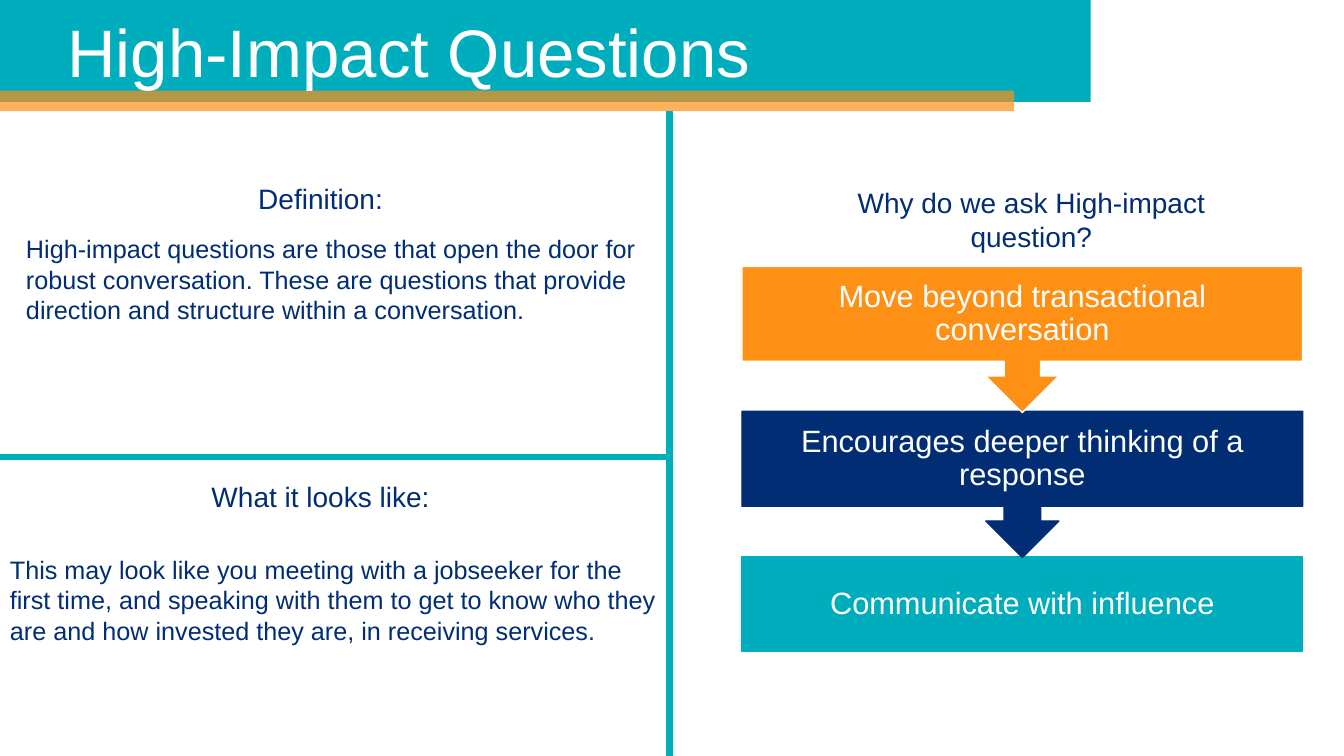
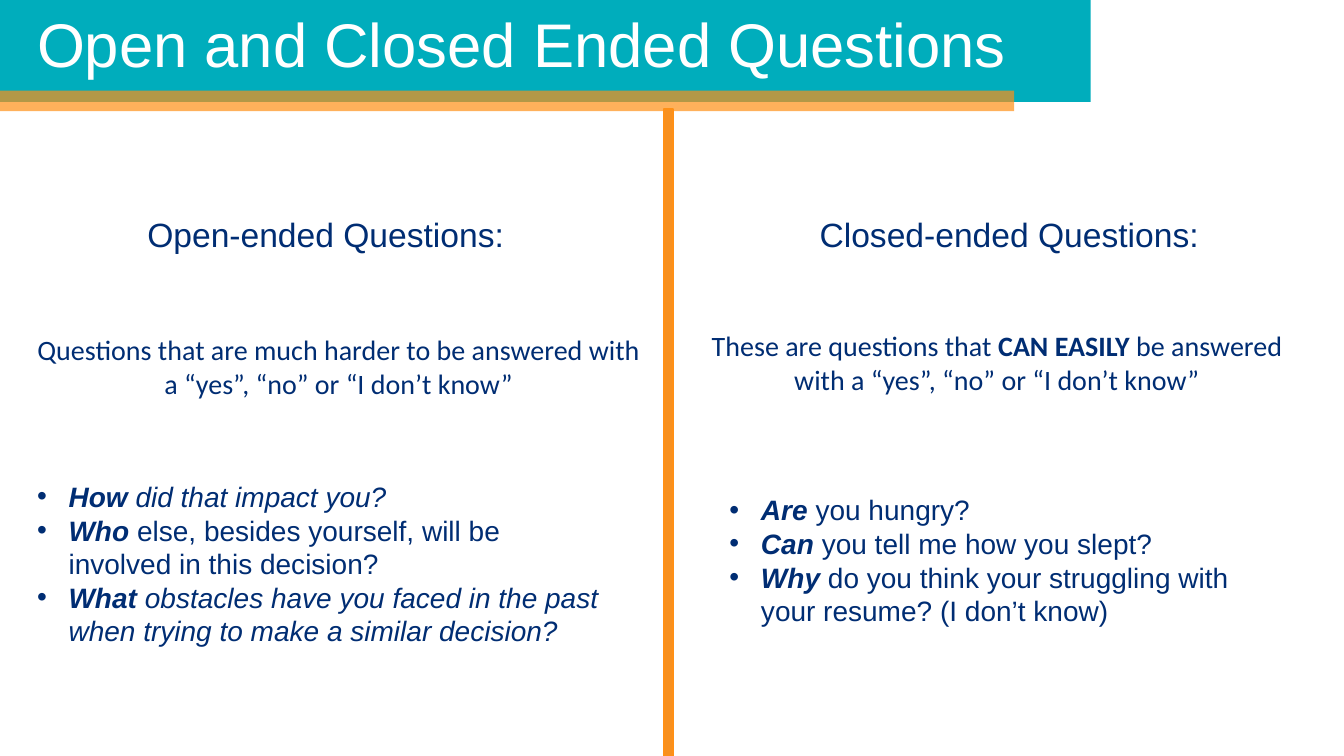
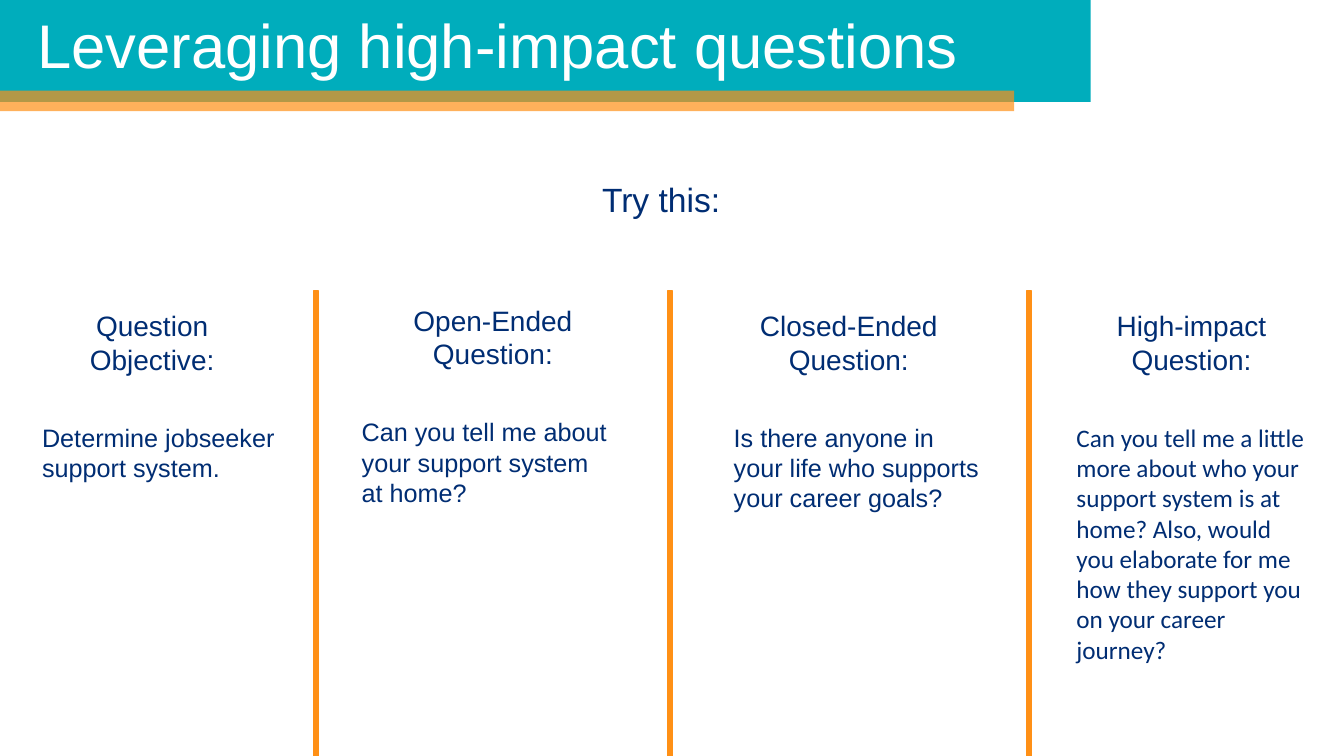
from dataclasses import dataclass
from typing import NamedTuple

from pptx import Presentation
from pptx.dml.color import RGBColor
from pptx.enum.shapes import MSO_SHAPE
from pptx.enum.text import MSO_ANCHOR, MSO_AUTO_SIZE, PP_ALIGN
from pptx.oxml.ns import qn
from pptx.util import Pt

RECTANGLE = MSO_SHAPE.RECTANGLE
CALLOUT = MSO_SHAPE.DOWN_ARROW_CALLOUT
MIDDLE = MSO_ANCHOR.MIDDLE
GROW = MSO_AUTO_SIZE.SHAPE_TO_FIT_TEXT
LEFT = PP_ALIGN.LEFT
CENTER = PP_ALIGN.CENTER

TEAL = "00ADBC"
NAVY = "002D73"
ORANGE = "FF9016"
DIVIDER_ORANGE = "F79020"
WHITE = "FFFFFF"
SANS = "Arial"
HUMANIST = "Calibri"
BULLET_INDENT = 22.5


class Span(NamedTuple):
    text: str
    bold: bool = False
    italic: bool = False


@dataclass
class Block:
    left: float
    top: float
    width: float
    height: float
    size: float
    paragraphs: list[list[Span]]
    align: PP_ALIGN = LEFT
    font: str = SANS
    color: str = NAVY
    bulleted: bool = False


@dataclass
class Bar:
    left: float
    top: float
    width: float
    height: float
    fill: str
    outline: str | None = None
    kind: MSO_SHAPE = RECTANGLE


class Reason(NamedTuple):
    text: str
    top: float
    height: float
    fill: str
    outline: str
    kind: MSO_SHAPE


class Column(NamedTuple):
    heading: str
    heading_left: float
    example: str
    example_left: float
    example_width: float
    rise: float = 0
    font: str = SANS


def rgb(color: str) -> RGBColor:
    return RGBColor.from_string(color)


def plain(text: str) -> list[list[Span]]:
    return [[Span(text)]]


def draw_bar(slide, bar: Bar):
    shape = slide.shapes.add_shape(
        bar.kind, Pt(bar.left), Pt(bar.top), Pt(bar.width), Pt(bar.height))
    shape.shadow.inherit = False
    shape.fill.solid()
    shape.fill.fore_color.rgb = rgb(bar.fill)
    if bar.outline:
        shape.line.color.rgb = rgb(bar.outline)
        shape.line.width = Pt(1)
    else:
        shape.line.fill.background()
    return shape


def style_run(run, size: float, font: str, color: str, span: Span) -> None:
    run.font.size = Pt(size)
    run.font.name = font
    run.font.color.rgb = rgb(color)
    run.font.bold = span.bold
    run.font.italic = span.italic


def add_bullet(paragraph) -> None:
    properties = paragraph._p.get_or_add_pPr()
    properties.set("marL", str(Pt(BULLET_INDENT)))
    properties.set("indent", str(-Pt(BULLET_INDENT)))
    properties.makeelement(qn("a:buFont"), {})
    for tag, key, value in (("a:buFont", "typeface", SANS), ("a:buChar", "char", "•")):
        properties.append(properties.makeelement(qn(tag), {key: value}))


def draw_block(slide, block: Block) -> None:
    frame = slide.shapes.add_textbox(
        Pt(block.left), Pt(block.top), Pt(block.width), Pt(block.height)).text_frame
    frame.word_wrap = True
    frame.auto_size = GROW
    for index, spans in enumerate(block.paragraphs):
        paragraph = frame.add_paragraph() if index else frame.paragraphs[0]
        paragraph.alignment = block.align
        if block.bulleted:
            add_bullet(paragraph)
        for span in spans:
            run = paragraph.add_run()
            run.text = span.text
            style_run(run, block.size, block.font, block.color, span)


def draw_reason(slide, reason: Reason) -> None:
    shape = draw_bar(slide, Bar(530, reason.top, 400.5, reason.height,
                                reason.fill, reason.outline, reason.kind))
    frame = shape.text_frame
    frame.word_wrap = True
    frame.vertical_anchor = MIDDLE
    frame.margin_left = frame.margin_right = Pt(12.2)
    frame.margin_top = frame.margin_bottom = Pt(12.2)
    frame.text = reason.text
    paragraph = frame.paragraphs[0]
    paragraph.alignment = CENTER
    paragraph.line_spacing = 0.9
    style_run(paragraph.runs[0], 22, SANS, WHITE, Span(reason.text))


def start_slide(deck, title: str, left: float = 19.4, top: float = 1, size: float = 44):
    slide = deck.slides.add_slide(deck.slide_layouts[6])
    draw_bar(slide, Bar(0, 0, 779, 72.7, TEAL))
    stripe = draw_bar(slide, Bar(0, 64.7, 724.4, 14.8, ORANGE))
    tint = stripe._element.spPr.find(".//" + qn("a:srgbClr"))
    tint.append(tint.makeelement(qn("a:alpha"), {"val": "70000"}))
    draw_block(slide, Block(left, top, 921.6, 60.5, size, plain(title), color=WHITE))
    return slide


def build_definition(deck) -> None:
    slide = start_slide(deck, "High-Impact Questions", 41, 3.6, 48)
    draw_bar(slide, Bar(0, 324.7, 476, 3.6, TEAL, TEAL))
    draw_bar(slide, Bar(476, 80, 4.3, 460, TEAL, TEAL))
    for heading, left, top, width in (
        ("Definition:", 114.5, 126, 229),
        ("What it looks like:", 114.5, 339, 229),
        ("Why do we ask High-impact question?", 569, 129, 335.5),
    ):
        draw_block(slide, Block(left, top, width, 31.5, 20, plain(heading), CENTER))
    for answer, left, top, width in (
        ("High-impact questions are those that open the door for robust conversation. "
         "These are questions that provide direction and structure within a conversation.",
         11.5, 163.4, 452),
        ("This may look like you meeting with a jobseeker for the first time, and "
         "speaking with them to get to know who they are and how invested they are, "
         "in receiving services.", 0, 392.4, 480),
    ):
        draw_block(slide, Block(left, top, width, 72.7, 18, plain(answer)))
    for reason in (
        Reason("Communicate with influence", 397.6, 68, TEAL, TEAL, RECTANGLE),
        Reason("Encourages deeper thinking of a response", 293.8, 104.4, NAVY, NAVY, CALLOUT),
        Reason("Move beyond transactional conversation", 190.3, 104.4, ORANGE, WHITE, CALLOUT),
    ):
        draw_reason(slide, reason)


def build_comparison(deck) -> None:
    slide = start_slide(deck, "Open and Closed Ended Questions")
    draw_bar(slide, Bar(474.2, 78, 6.5, 462, DIVIDER_ORANGE, ORANGE))
    for heading, left in (("Open-ended Questions:", 75.6), ("Closed-ended Questions:", 563.8)):
        draw_block(slide, Block(left, 149, 314, 36, 24, plain(heading), CENTER))
    for meaning, left, top in (
        ([Span("Questions that are much harder to be answered with a "
               "“yes”, “no” or “I don’t know”")], 19.4, 234),
        ([Span("These are questions that "), Span("CAN EASILY", bold=True),
          Span(" be answered with a “yes”, “no” or “I don’t know”")], 489.6, 231.1),
    ):
        draw_block(slide, Block(left, top, 445, 55.4, 20, [meaning], CENTER, HUMANIST))
    for examples, left, top, width, height in (
        ((("How ", "did that impact you?", True),
          ("Who ", "else, besides yourself, will be involved in this decision?", False),
          ("What ", "obstacles have you faced in the past when trying to make "
           "a similar decision?", True)), 19.4, 339, 420.5, 128),
        ((("Are", " you hungry?", False),
          ("Can ", "you tell me how you slept?", False),
          ("Why", " do you think your struggling with your resume? (I don’t know)",
           False)), 514, 348.5, 396, 104.4),
    ):
        paragraphs = [[Span(opener, True, True), Span(rest, italic=slanted)]
                      for opener, rest, slanted in examples]
        draw_block(slide, Block(left, top, width, height, 20, paragraphs, bulleted=True))


def build_practice(deck) -> None:
    slide = start_slide(deck, "Leveraging high-impact questions", top=1.4)
    draw_block(slide, Block(262, 124, 420.5, 36, 24, plain("Try this:"), CENTER))
    for left in (224, 476.6, 733):
        draw_bar(slide, Bar(left, 208, 3.6, 332, ORANGE, ORANGE))
    for column in (
        Column("Question Objective:", 19.4, "Determine jobseeker support system.", 23, 183),
        Column("Open-Ended Question:", 262.8,
               "Can you tell me about your support system at home?", 251.3, 190, 4),
        Column("Closed-Ended Question:", 517,
               "Is there anyone in your life who supports your career goals?", 517, 190),
        Column("High-impact Question:", 761.8,
               "Can you tell me a little more about who your support system is at home? "
               "Also, would you elaborate for me how they support you on your career "
               "journey?", 761.8, 178.6, font=HUMANIST),
    ):
        draw_block(slide, Block(column.heading_left, 217 - column.rise, 178.6, 55.4, 20,
                                plain(column.heading), CENTER))
        draw_block(slide, Block(column.example_left, 298 - column.rise,
                                column.example_width, 72.7, 18,
                                plain(column.example), font=column.font))


def main() -> None:
    deck = Presentation()
    deck.slide_width = Pt(960)
    deck.slide_height = Pt(540)
    build_definition(deck)
    build_comparison(deck)
    build_practice(deck)
    deck.save("out.pptx")


if __name__ == "__main__":
    main()
